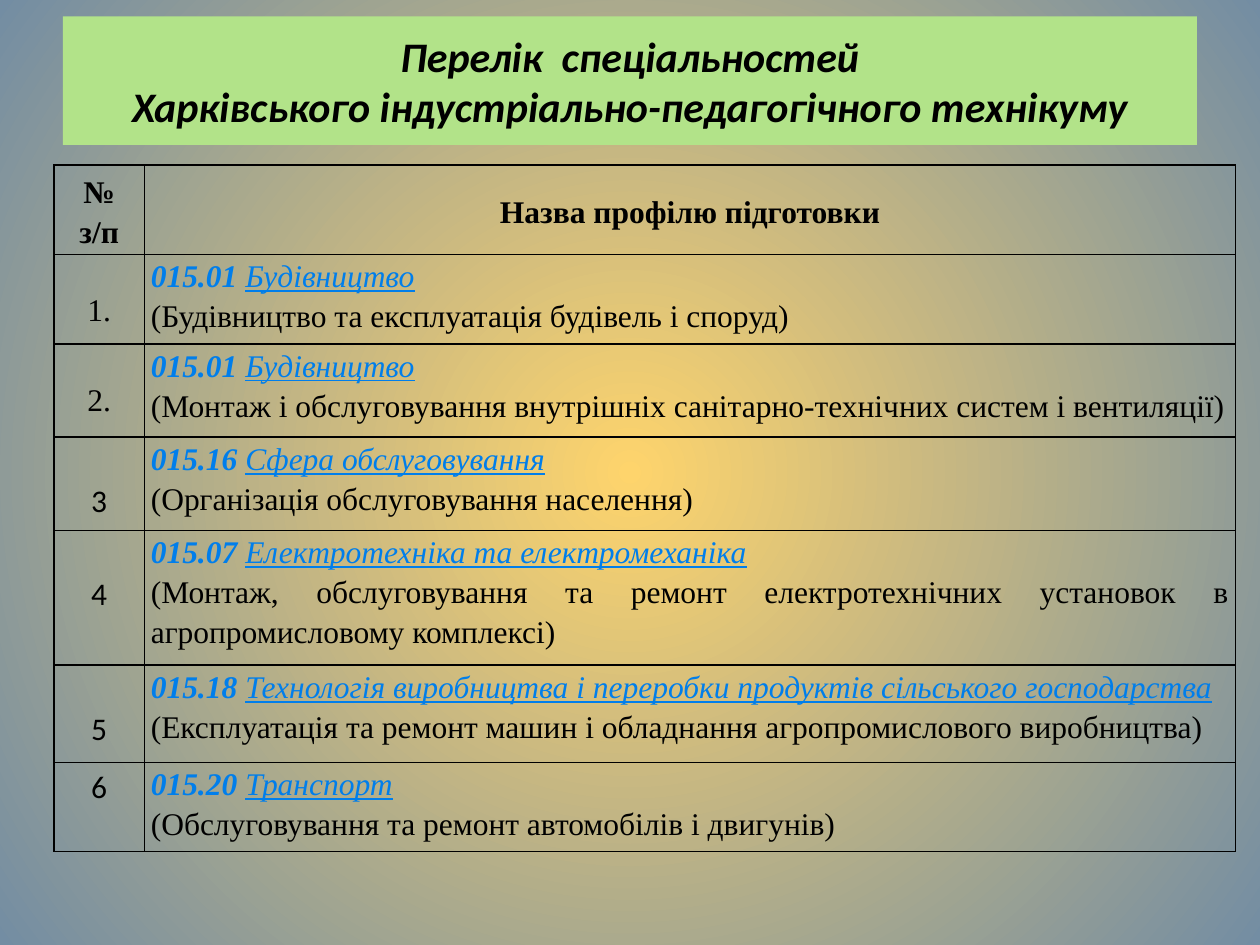
from lxml import etree
from pptx import Presentation
from pptx.dml.color import RGBColor
from pptx.enum.shapes import MSO_SHAPE
from pptx.enum.text import MSO_ANCHOR, PP_ALIGN
from pptx.oxml import parse_xml
from pptx.oxml.ns import nsdecls, qn
from pptx.util import Cm, Pt

BLACK = RGBColor(0x00, 0x00, 0x00)
BLUE = RGBColor(0x00, 0x7E, 0xEB)
GREEN = RGBColor(0xB2, 0xE3, 0x89)
GOLD = RGBColor(0xFE, 0xD4, 0x6C)
STEEL = RGBColor(0x73, 0x8D, 0xA3)
RECT = MSO_SHAPE.RECTANGLE
TOP, MIDDLE = MSO_ANCHOR.TOP, MSO_ANCHOR.MIDDLE
CENTER, JUSTIFY = PP_ALIGN.CENTER, PP_ALIGN.JUSTIFY
SERIF, SANS = "Times New Roman", "Calibri"

HEADS = ["№\vз/п", "Назва профілю підготовки"]
ROWS = [
    ("1.", SERIF, 0.69, 1.8, "015.01 ", "Будівництво",
     "(Будівництво та експлуатація будівель і споруд)"),
    ("2.", SERIF, 0.69, 1.88, "015.01 ", "Будівництво",
     "(Монтаж і обслуговування внутрішніх санітарно-технічних систем і вентиляції)"),
    ("3", SANS, 0.8, 1.88, "015.16 ", "Сфера обслуговування",
     "(Організація обслуговування населення)"),
    ("4", SANS, 0.8, 2.72, "015.07 ", "Електротехніка та електромеханіка",
     "(Монтаж, обслуговування та ремонт електротехнічних установок в агропромисловому комплексі)"),
    ("5", SANS, 0.8, 1.96, "015.18 ",
     "Технологія виробництва і переробки продуктів сільського господарства",
     "(Експлуатація та ремонт машин і обладнання агропромислового виробництва)"),
    ("6", SANS, 0, 1.8, "015.20 ", "Транспорт",
     "(Обслуговування та ремонт автомобілів і двигунів)"),
]


def style(run, size=18, face=SERIF, color=BLACK, bold=False, slant=False, line=False):
    font = run.font
    font.size, font.name = Pt(size), face
    font.bold, font.italic, font.underline = bold, slant, line
    font.color.rgb = color


def frame(cell, text, align, anchor=TOP, top=0):
    cell.fill.background()
    cell.margin_left = cell.margin_right = Cm(0.13)
    cell.margin_top, cell.margin_bottom = Cm(top), 0
    cell.vertical_anchor = anchor
    props = cell._tc.get_or_add_tcPr()
    for spot, side in enumerate(("lnL", "lnR", "lnT", "lnB")):
        props.insert(spot, parse_xml(
            f'<a:{side} {nsdecls("a")} w="12700"><a:solidFill>'
            f'<a:srgbClr val="{BLACK}"/></a:solidFill></a:{side}>'))
    cell.text_frame.text = text
    for para in cell.text_frame.paragraphs:
        para.alignment, para.line_spacing = align, 1.15
    return cell.text_frame.paragraphs


deck = Presentation()
deck.slide_width, deck.slide_height = Cm(25.4), Cm(19.05)
slide = deck.slides.add_slide(deck.slide_layouts[6])

back = slide.background.fill
back.gradient()
for stop, color in zip(back.gradient_stops, (GOLD, STEEL)):
    stop.color.rgb = color
grad = slide.element.find(".//" + qn("a:gradFill"))
grad.remove(grad.find(qn("a:lin")))
ring = etree.SubElement(grad, qn("a:path"), {"path": "circle"})
etree.SubElement(ring, qn("a:fillToRect"), dict.fromkeys("ltrb", "50000"))

title = slide.shapes.add_shape(RECT, Cm(1.27), Cm(0.33), Cm(22.86), Cm(2.59))
title.shadow.inherit = False
title.fill.solid()
title.fill.fore_color.rgb = GREEN
title.line.fill.background()
title.text_frame.word_wrap = True
title.text_frame.vertical_anchor = MIDDLE
title.text_frame.text = "Перелік  спеціальностей\nХарківського індустріально-педагогічного технікуму"
for para in title.text_frame.paragraphs:
    para.alignment = CENTER
    style(para.runs[0], 24, SANS, bold=True, slant=True)

table = slide.shapes.add_table(
    len(ROWS) + 1, 2, Cm(1.09), Cm(3.33), Cm(23.82), Cm(13.84)).table
table.first_row = table.horz_banding = False
table.columns[0].width, table.columns[1].width = Cm(1.82), Cm(22)
table.rows[0].height = Cm(1.8)
for col, head in enumerate(HEADS):
    for run in frame(table.cell(0, col), head, CENTER, MIDDLE)[0].runs:
        style(run, bold=True)

for row, (num, face, top, high, code, name, note) in enumerate(ROWS, 1):
    table.rows[row].height = Cm(high)
    mark = frame(table.cell(row, 0), num, CENTER, top=top)[0]
    style(mark.runs[0], face=face)
    first, last = frame(table.cell(row, 1), f"{code}\n{note}", JUSTIFY)
    style(first.runs[0], color=BLUE, bold=True, slant=True)
    link = first.add_run()
    link.text = name
    style(link, color=BLUE, slant=True, line=True)
    style(last.runs[0])

deck.save("out.pptx")
